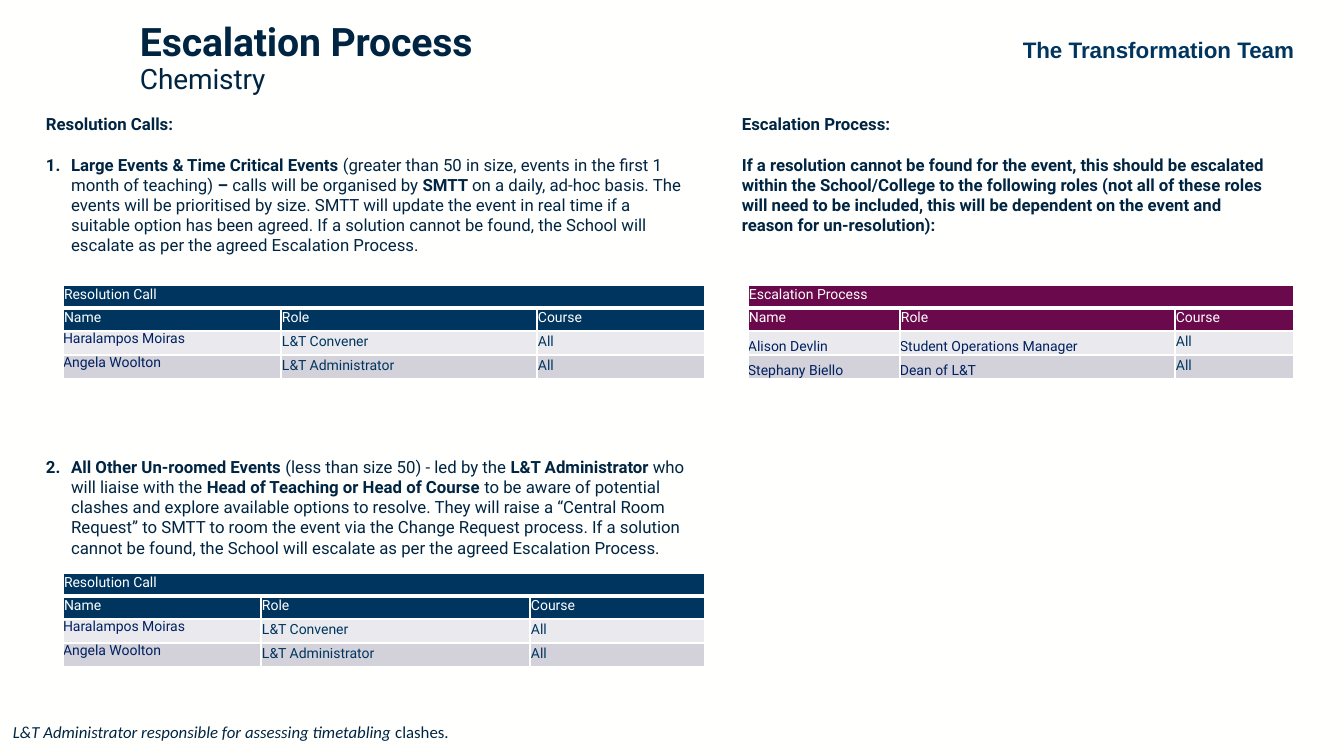
import pptx
import pptx.dml.color
import pptx.enum.text
import pptx.oxml.ns
import pptx.util
from lxml import etree

PX = 914400 / 100.8
COLORS = {
    "paper": "FFFFFE",
    "ink": "002542",
    "navy": "00355F",
    "plum": "6A094B",
    "name": "002060",
    "band_light": "EAE9EE",
    "band_dark": "D3D1DA",
}
LINE = 14.4  # height in points of one 12 pt line of Roboto
ROW_HEIGHTS = (23, 23, 24, 24)
CELL_INSETS = (1, 1, 1, 5)
ANCHOR = pptx.enum.text.MSO_ANCHOR


def px(length):
    return pptx.util.Emu(round(length * PX))


def rgb(color):
    return pptx.dml.color.RGBColor.from_string(COLORS[color])


def style(font, size, color, face="Roboto", bold=False, italic=False):
    font.size = pptx.util.Pt(size)
    font.name = face
    font.color.rgb = rgb(color)
    font.bold = bold
    font.italic = italic


def add_box(slide, box, fit=True):
    frame = slide.shapes.add_textbox(*map(px, box)).text_frame
    frame.word_wrap = True
    if fit:
        frame.auto_size = pptx.enum.text.MSO_AUTO_SIZE.SHAPE_TO_FIT_TEXT
    return frame


def add_runs(paragraph, parts):
    """Alternate bold and regular parts, starting with bold."""
    for index, part in enumerate(parts):
        run = paragraph.add_run()
        run.text = part
        style(run.font, 12, "ink", bold=index % 2 == 0)


def number(paragraph):
    properties = paragraph._p.get_or_add_pPr()
    properties.set("marL", "228600")
    properties.set("indent", "-228600")
    etree.SubElement(properties, pptx.oxml.ns.qn("a:buAutoNum"), type="arabicPeriod")


def add_header(slide, title_box, team_box):
    title = add_box(slide, title_box, fit=False)
    title.vertical_anchor = ANCHOR.MIDDLE
    title.text = "Escalation Process\vChemistry"
    heading = title.paragraphs[0]
    heading.line_spacing = 0.9
    for run, size, bold in zip(heading.runs, (28, 20), (True, False)):
        style(run.font, size, "ink", bold=bold)
        run._r.get_or_add_rPr().set("spc", "-10")

    team = add_box(slide, team_box)
    team.text = "The Transformation Team"
    team.paragraphs[0].alignment = pptx.enum.text.PP_ALIGN.CENTER
    style(team.paragraphs[0].runs[0].font, 16, "navy", "Arial", bold=True)


def add_section(slide, box, heading, items, numbered=False):
    """Place a heading and its (lines of space before, parts) items."""
    frame = add_box(slide, box)
    add_runs(frame.paragraphs[0], [heading])
    for gap_lines, parts in items:
        paragraph = frame.add_paragraph()
        paragraph.space_before = pptx.util.Pt(gap_lines * LINE)
        if numbered:
            number(paragraph)
        add_runs(paragraph, parts)


def set_borders(cell, top=1, bottom=1):
    properties = cell._tc.get_or_add_tcPr()
    widths = {"lnL": 1, "lnR": 1, "lnT": top, "lnB": bottom}
    for index, (side, width) in enumerate(widths.items()):
        line = etree.Element(pptx.oxml.ns.qn("a:" + side), w=str(width * 12700))
        fill = etree.SubElement(line, pptx.oxml.ns.qn("a:solidFill"))
        etree.SubElement(fill, pptx.oxml.ns.qn("a:srgbClr"), val=COLORS["paper"])
        properties.insert(index, line)


def fill_cell(cell, text, fill, color, insets=CELL_INSETS, anchor=ANCHOR.BOTTOM):
    cell.fill.solid()
    cell.fill.fore_color.rgb = rgb(fill)
    cell.margin_left, cell.margin_top, cell.margin_right, cell.margin_bottom = map(px, insets)
    cell.vertical_anchor = anchor
    cell.text_frame.text = text
    for run in cell.text_frame.paragraphs[0].runs:
        style(run.font, 10, color)


def add_contacts(slide, left, top, widths, title, people, accent, flush_columns, flush_anchor):
    """Place a contact table; its flush columns have no cell insets."""
    table = slide.shapes.add_table(
        len(ROW_HEIGHTS), len(widths), px(left), px(top), px(sum(widths)), px(sum(ROW_HEIGHTS))
    ).table
    table.first_row = table.horz_banding = False
    for column, width in zip(table.columns, widths):
        column.width = px(width)
    for row, height in zip(table.rows, ROW_HEIGHTS):
        row.height = px(height)

    # Title and column headings
    header = [(title, "", ""), ("Name", "Role", "Course")]
    for row, labels in enumerate(header):
        for column, label in enumerate(labels):
            cell = table.cell(row, column)
            fill_cell(cell, label, accent, "paper")
            set_borders(cell, top=3 if row == 1 else 1, bottom=3 if row == 0 else 1)
    table.cell(0, 0).merge(table.cell(0, len(widths) - 1))

    # People
    for row, person in enumerate(people, start=len(header)):
        band = "band_dark" if row % 2 else "band_light"
        for column, value in enumerate(person):
            cell = table.cell(row, column)
            if column < flush_columns:
                fill_cell(cell, value, band, "name", (0, 0, 0, 0), flush_anchor)
            else:
                fill_cell(cell, value, band, "navy")
                cell.text_frame.paragraphs[0].line_spacing = 1.07
                cell.text_frame.paragraphs[0].space_after = pptx.util.Pt(8)
            set_borders(cell)


def add_footnote(slide, box):
    paragraph = add_box(slide, box).paragraphs[0]
    for text, italic in (
        ("L&T Administrator responsible for assessing timetabling ", True),
        ("clashes.", False),
    ):
        run = paragraph.add_run()
        run.text = text
        style(run.font, 12, "ink", "Calibri", italic=italic)


RESOLUTION_CALLS = [
    (1, [
        "Large Events & Time Critical Events ",
        "(greater than 50 in size, events in the first 1 month of teaching) ",
        "– ",
        "calls will be organised by ",
        "SMTT ",
        "on a daily, ad-hoc basis. The events will be prioritised by size. SMTT will update "
        "the event in real time if a suitable option has been agreed. If a solution cannot be "
        "found, the School will escalate as per the agreed Escalation Process.",
    ]),
    (10, [
        "All Other Un-roomed Events ",
        "(less than size 50) - led by the ",
        "L&T Administrator ",
        "who will liaise with the ",
        "Head of Teaching or Head of Course ",
        "to be aware of potential clashes and explore available options to resolve. They will "
        "raise a “Central Room Request” to SMTT to room the event via the Change Request "
        "process. If a solution cannot be found, the School will escalate as per the agreed "
        "Escalation Process.",
    ]),
]
ESCALATION = [
    (1, [
        "",
        "If a resolution cannot be found for the event, this should be escalated within the "
        "School/College to the following roles (not all of these roles will need to be "
        "included, this will be dependent on the event and reason for un-resolution):",
    ][1:]),
]
RESOLUTION_PEOPLE = [
    ("Haralampos Moiras", "L&T Convener", "All"),
    ("Angela Woolton", "L&T Administrator", "All"),
]
ESCALATION_PEOPLE = [
    ("Alison Devlin", "Student Operations Manager", "All"),
    ("Stephany Biello", "Dean of L&T", "All"),
]


def main():
    deck = pptx.Presentation()
    deck.slide_width, deck.slide_height = px(1344), px(756)
    slide = deck.slides.add_slide(deck.slide_layouts[6])
    slide.background.fill.solid()
    slide.background.fill.fore_color.rgb = rgb("paper")

    add_header(slide, (130, 0, 426, 118), (1003, 31, 311, 37))
    add_section(slide, (36, 109, 668, 458), "Resolution Calls:", RESOLUTION_CALLS, numbered=True)
    add_section(slide, (732, 109, 546, 152), "Escalation Process:", ESCALATION)
    for top, widths in ((285, (218, 256, 168)), (573, (198, 269, 175))):
        add_contacts(slide, 63, top, widths, "Resolution Call", RESOLUTION_PEOPLE,
                     "navy", 1, ANCHOR.TOP)
    add_contacts(slide, 748, 285, (152, 275, 119), "Escalation Process", ESCALATION_PEOPLE,
                 "plum", 2, ANCHOR.BOTTOM)
    add_footnote(slide, (3, 717, 824, 30))
    deck.save("out.pptx")


if __name__ == "__main__":
    main()
